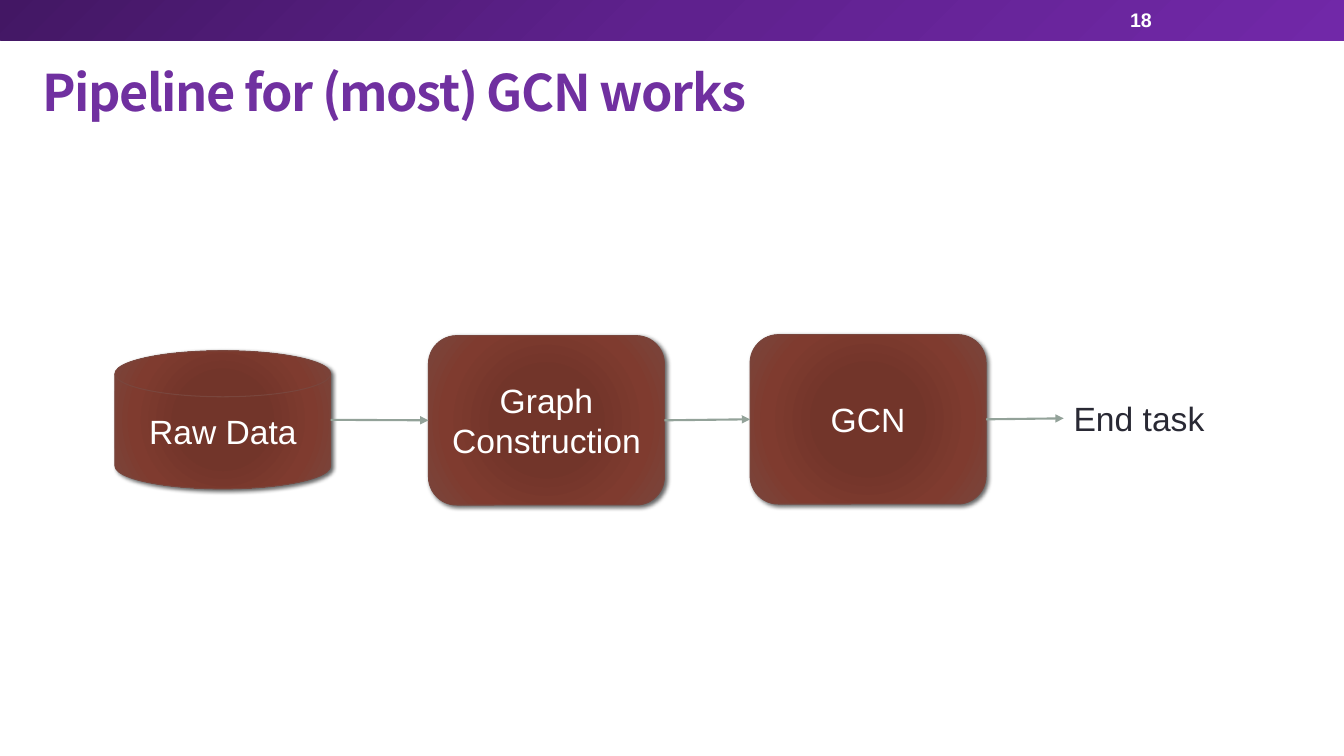
"""Build the slide that shows the usual GCN pipeline."""
from lxml import etree
from pptx import Presentation
from pptx.dml.color import RGBColor
from pptx.enum.shapes import MSO_CONNECTOR, MSO_SHAPE
from pptx.enum.text import MSO_ANCHOR, PP_ALIGN
from pptx.oxml.ns import qn
from pptx.util import Inches, Pt

RECTANGLE = MSO_SHAPE.RECTANGLE
ROUNDED = MSO_SHAPE.ROUNDED_RECTANGLE
DISK = MSO_SHAPE.FLOWCHART_MAGNETIC_DISK
STRAIGHT = MSO_CONNECTOR.STRAIGHT
MIDDLE, TOP = MSO_ANCHOR.MIDDLE, MSO_ANCHOR.TOP
LEFT, CENTER = PP_ALIGN.LEFT, PP_ALIGN.CENTER

WHITE = RGBColor(0xFF, 0xFF, 0xFF)
BLACK = RGBColor(0x00, 0x00, 0x00)
INK = RGBColor(0x29, 0x29, 0x34)
PURPLE = RGBColor(0x70, 0x30, 0xA0)
RUST_EDGE = RGBColor(0x79, 0x46, 0x3D)
ARROW_GRAY = RGBColor(0x93, 0xA2, 0x99)
BANNER_STOPS = [(0, RGBColor(0x43, 0x17, 0x64)), (50, RGBColor(0x5F, 0x21, 0x8E)),
                (100, RGBColor(0x71, 0x28, 0xA8))]
RUST_STOPS = [(0, RGBColor(0x74, 0x33, 0x27)), (34, RGBColor(0x72, 0x35, 0x2A)),
              (70, RGBColor(0x7F, 0x3B, 0x2F)), (100, RUST_EDGE)]


def write_text(shape, text, size=24, font="Arial", color=WHITE, bold=False,
               align=LEFT, anchor=MIDDLE, line_spacing=None, tracking=None):
    frame = shape.text_frame
    frame.word_wrap = True
    frame.vertical_anchor = anchor
    para = frame.paragraphs[0]
    para.alignment = align
    para.line_spacing = line_spacing
    span = para.add_run()
    span.text = text
    span.font.size = Pt(size)
    span.font.name = font
    span.font.bold = bold
    span.font.color.rgb = color
    properties = span.font._element
    etree.SubElement(properties, qn("a:ea")).set("typeface", font)
    if tracking is not None:
        properties.set("spc", str(tracking * 100))


def fill_gradient(shape, stops, angle=None):
    shape.fill.gradient()
    gradient = shape._element.spPr.find(qn("a:gradFill"))
    for child in list(gradient):
        gradient.remove(child)
    stop_list = etree.SubElement(gradient, qn("a:gsLst"))
    for position, color in stops:
        stop = etree.SubElement(stop_list, qn("a:gs"), pos=str(position * 1000))
        etree.SubElement(stop, qn("a:srgbClr"), val=str(color))
    if angle is not None:
        etree.SubElement(gradient, qn("a:lin"), ang=str(angle * 60000), scaled="0")
    else:
        circle = etree.SubElement(gradient, qn("a:path"), path="circle")
        etree.SubElement(circle, qn("a:fillToRect"), l="100000", t="100000",
                         r="100000", b="100000")


deck = Presentation()
deck.slide_width = Inches(13.33)
deck.slide_height = Inches(7.5)
page = deck.slides.add_slide(deck.slide_layouts[6])

banner = page.shapes.add_shape(RECTANGLE, 0, 0, Inches(13.33), Inches(0.4))
banner.shadow.inherit = False
banner.line.fill.background()
fill_gradient(banner, BANNER_STOPS, angle=45)

title = page.shapes.add_textbox(Inches(0.32), Inches(0.4), Inches(12), Inches(1.08))
write_text(title, "Pipeline for (most) GCN works", size=36, font="Noto Sans CJK SC",
           color=PURPLE, bold=True, line_spacing=0.9, tracking=-1)

number = page.shapes.add_textbox(Inches(11.11), Inches(0.02), Inches(1.56), Inches(0.36))
write_text(number, "18", size=14, bold=True)

stages = []
for text, preset, left, top, width, height in [
    ("Raw Data", DISK, 1.14, 3.48, 2.14, 1.37),
    ("Graph Construction", ROUNDED, 4.25, 3.33, 2.34, 1.68),
    ("GCN", ROUNDED, 7.44, 3.32, 2.34, 1.68),
]:
    box = page.shapes.add_shape(preset, Inches(left), Inches(top), Inches(width), Inches(height))
    fill_gradient(box, RUST_STOPS)
    box.line.color.rgb = RUST_EDGE
    box.line.width = Pt(0.75)
    box.shadow.inherit = False
    effects = box._element.spPr.find(qn("a:effectLst"))
    shadow = etree.SubElement(effects, qn("a:outerShdw"), blurRad=str(Pt(3)), dist=str(Pt(2)),
                              dir="2700000", algn="tl", rotWithShape="0")
    shadow_color = etree.SubElement(shadow, qn("a:srgbClr"), val=str(BLACK))
    etree.SubElement(shadow_color, qn("a:alpha"), val="60000")
    write_text(box, text, align=CENTER)
    stages.append(box)

end_task = page.shapes.add_textbox(Inches(10.55), Inches(3.9), Inches(1.94), Inches(0.5))
write_text(end_task, "End task", color=INK, anchor=TOP)
stages.append(end_task)

for source, target in zip(stages, stages[1:]):
    arrow = page.shapes.add_connector(
        STRAIGHT, source.left + source.width, source.top + source.height // 2,
        target.left, target.top + target.height // 2)
    if source.auto_shape_type == ROUNDED:
        arrow.begin_connect(source, 3)
    arrow.end_connect(target, 1)
    arrow.line.color.rgb = ARROW_GRAY
    arrow.line.width = Pt(1.5)
    etree.SubElement(arrow.line._get_or_add_ln(), qn("a:tailEnd"), type="triangle")
    etree.SubElement(arrow._element.spPr, qn("a:effectLst"))

deck.save("out.pptx")
